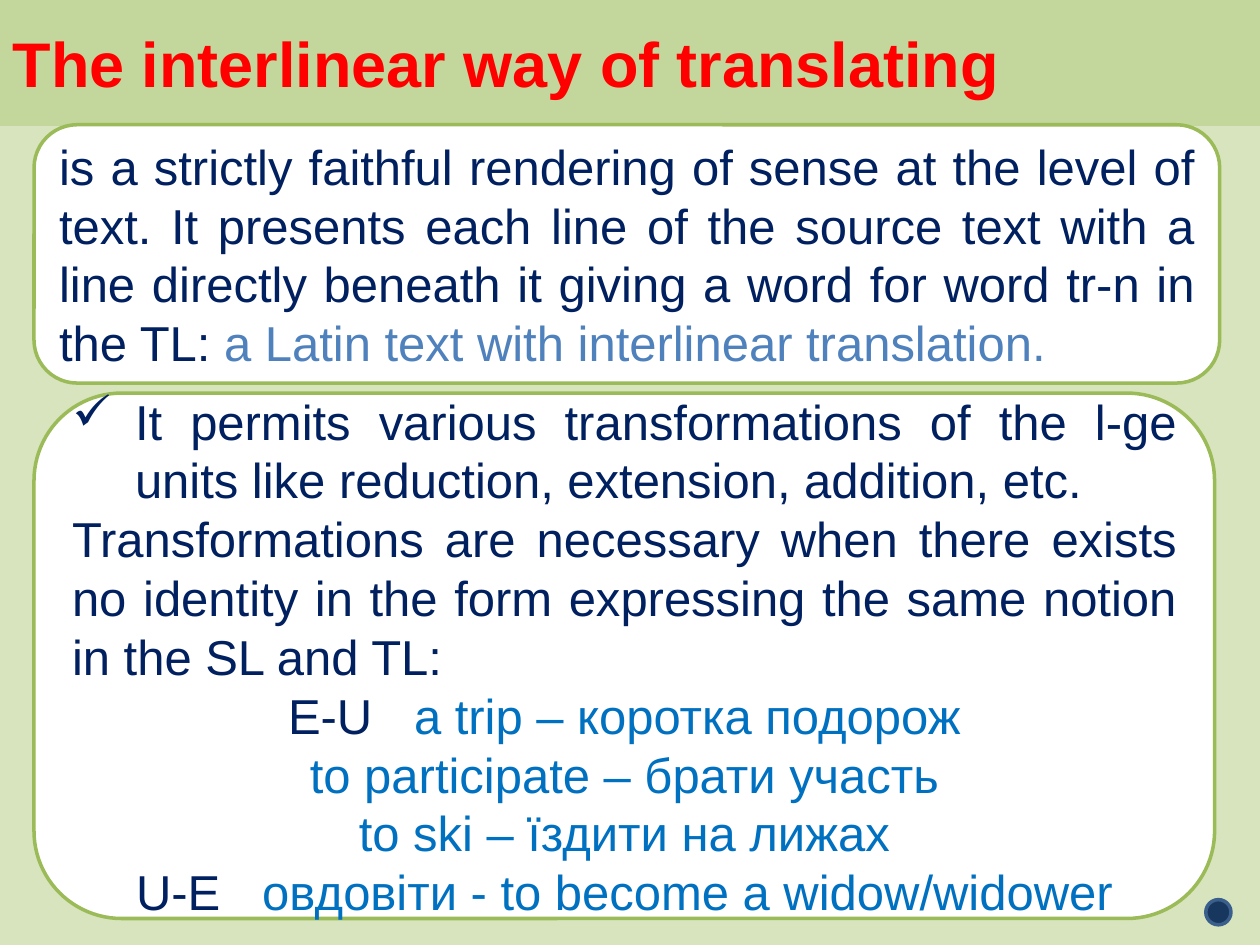
import pptx
import pptx.util
from lxml import etree
from pptx.dml.color import RGBColor
from pptx.enum.shapes import MSO_SHAPE
from pptx.enum.text import MSO_ANCHOR, MSO_AUTO_SIZE, PP_ALIGN
from pptx.oxml.ns import qn

W, H = 10, 7.5
BACKGROUND = RGBColor(0xD7, 0xE4, 0xBD)
BAND = RGBColor(0xC3, 0xD6, 0x9B)
GREEN = RGBColor(0x9B, 0xBB, 0x59)
WHITE = RGBColor(0xFF, 0xFF, 0xFF)
RED = RGBColor(0xFF, 0x00, 0x00)
NAVY = RGBColor(0x00, 0x20, 0x60)
BLUE = RGBColor(0x00, 0x70, 0xC0)
SOFT_BLUE = RGBColor(0x4F, 0x81, 0xBD)
DOT_FILL = RGBColor(0x17, 0x37, 0x5E)
DOT_LINE = RGBColor(0x3A, 0x5F, 0x8C)

TITLE_BOX = (0, 0, W, 0.99)
DEFINITION_BOX = (0.27, 0.99, 9.41, 2.05)
DETAILS_BOX = (0.27, 3.12, 9.37, 4.17)
DOT_BOX = (9.57, 7.14, 0.2, 0.2)

JUSTIFY, CENTER = PP_ALIGN.JUSTIFY, PP_ALIGN.CENTER
DEFINITION = [
    (JUSTIFY, [
        ("is a strictly faithful rendering of sense at the level of text. "
         "It presents each line of the source text with a line directly beneath it "
         "giving a word for word tr-n in the TL: ", NAVY),
        ("a Latin text with interlinear translation.", SOFT_BLUE)]),
]
DETAILS = [
    (JUSTIFY, [("It permits various transformations of the l-ge units like "
                "reduction, extension, addition, etc. ", NAVY)]),
    (JUSTIFY, [("Transformations are necessary when there exists no identity in the "
                "form expressing the same notion in the SL and TL: ", NAVY)]),
    (CENTER, [("E-U", NAVY), ("\ta trip – коротка подорож", BLUE)]),
    (CENTER, [("to participate – брати участь", BLUE)]),
    (CENTER, [("to ski – їздити на лижах", BLUE)]),
    (CENTER, [("U-E\t", NAVY), ("овдовіти - to become a widow/widower", BLUE)]),
]


def inches(box):
    return [pptx.util.Inches(v) for v in box]


def add_run(p, text, size=28, color=NAVY, bold=False):
    r = p.add_run()
    r.text = text
    r.font.name = "Arial"
    r.font.size = pptx.util.Pt(size)
    r.font.bold = bold
    r.font.color.rgb = color


def paint(sp, fill, line):
    sp.fill.solid()
    sp.fill.fore_color.rgb = fill
    sp.line.color.rgb = line
    sp.line.width = pptx.util.Pt(2)


def add_check_bullet(p, indent=0.5):
    pPr = p._p.get_or_add_pPr()
    offset = pptx.util.Inches(indent)
    pPr.set("marL", str(offset))
    pPr.set("indent", str(-offset))
    etree.SubElement(pPr, qn("a:buFont"), typeface="Wingdings")
    etree.SubElement(pPr, qn("a:buChar"), char="ü")


def add_title(s, box, text):
    sp = s.shapes.title
    sp.left, sp.top, sp.width, sp.height = inches(box)
    paint(sp, BAND, BAND)
    tf = sp.text_frame
    tf.vertical_anchor = MSO_ANCHOR.MIDDLE
    tf.auto_size = MSO_AUTO_SIZE.NONE
    p = tf.paragraphs[0]
    p.alignment = PP_ALIGN.LEFT
    add_run(p, text, size=36, color=RED, bold=True)


def add_shape(s, kind, box, fill, line):
    sp = s.shapes.add_shape(kind, *inches(box))
    sp.shadow.inherit = False
    paint(sp, fill, line)
    return sp


def add_panel(s, box, paragraphs):
    """Add a rounded white panel and return its text frame."""
    tf = add_shape(s, MSO_SHAPE.ROUNDED_RECTANGLE, box, WHITE, GREEN).text_frame
    tf.word_wrap = True
    tf.vertical_anchor = MSO_ANCHOR.MIDDLE
    for i, (alignment, runs) in enumerate(paragraphs):
        p = tf.add_paragraph() if i else tf.paragraphs[0]
        p.alignment = alignment
        for text, color in runs:
            add_run(p, text, color=color)
    return tf


def main():
    prs = pptx.Presentation()
    prs.slide_width, prs.slide_height = inches((W, H))
    s = prs.slides.add_slide(prs.slide_layouts[5])
    s.background.fill.solid()
    s.background.fill.fore_color.rgb = BACKGROUND

    add_title(s, TITLE_BOX, "The interlinear way of translating")
    add_panel(s, DEFINITION_BOX, DEFINITION)
    add_shape(s, MSO_SHAPE.OVAL, DOT_BOX, DOT_FILL, DOT_LINE)
    add_check_bullet(add_panel(s, DETAILS_BOX, DETAILS).paragraphs[0])
    prs.save("out.pptx")


if __name__ == "__main__":
    main()
